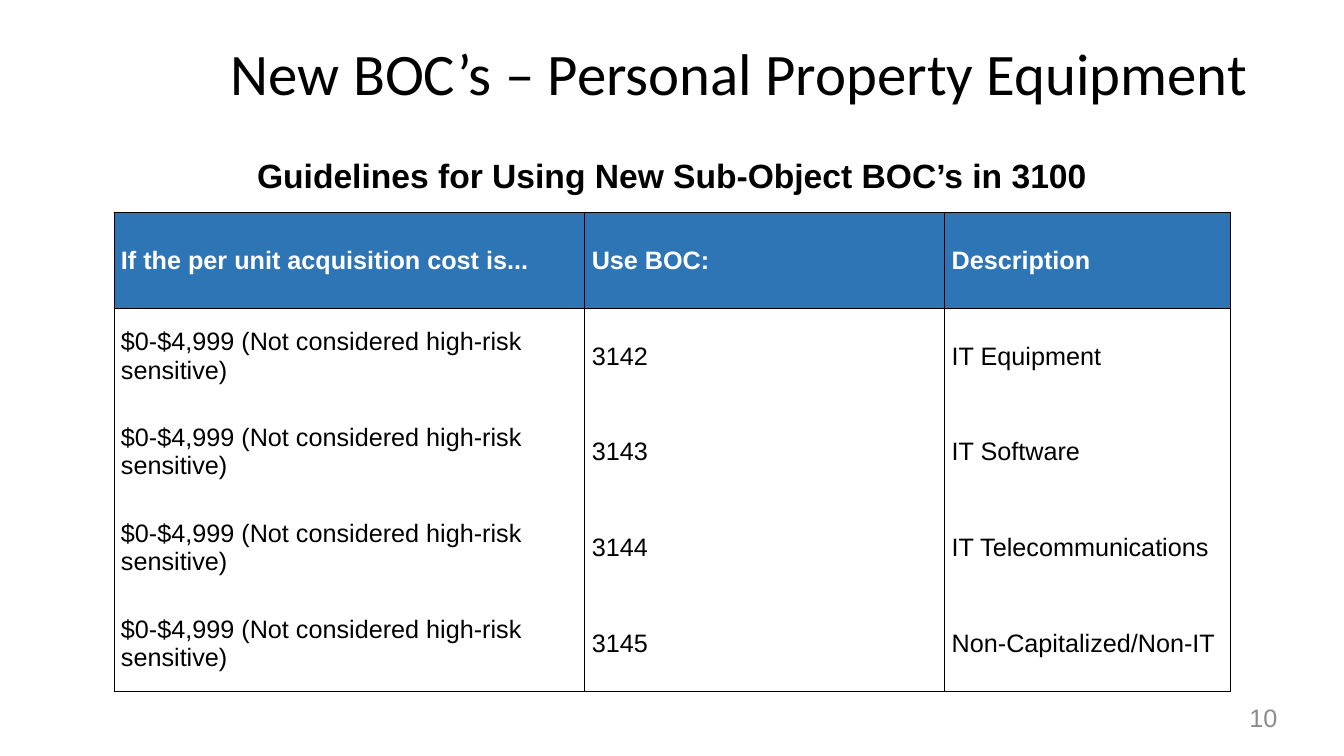
from lxml.etree import SubElement
from pptx import Presentation
from pptx.dml.color import RGBColor
from pptx.enum.text import MSO_ANCHOR, PP_ALIGN
from pptx.oxml.ns import qn
from pptx.util import Inches, Pt

COLORS = {"black": "000000", "white": "FFFFFF", "header": "2E75B6", "number": "8C8C8C"}
COST = "$0-$4,999 (Not considered high-risk sensitive)"
HEADER = ("If the per unit acquisition cost is...", "Use BOC:", "Description")
CODES = {
    "3142": "IT Equipment",
    "3143": "IT Software",
    "3144": "IT Telecommunications",
    "3145": "Non-Capitalized/Non-IT",
}


def write_text(frame, text, size=18, font="Arial", color="black", bold=False, align=PP_ALIGN.LEFT):
    paragraph = frame.paragraphs[0]
    paragraph.alignment = align
    run = paragraph.add_run()
    run.text = text
    run.font.size = Pt(size)
    run.font.name = font
    run.font.bold = bold
    run.font.color.rgb = RGBColor.from_string(COLORS[color])


class SlideBuilder:
    """Adds styled text and ruled tables to one slide."""

    def __init__(self, slide, border_width=0.6):
        self.slide = slide
        self.border_width = border_width

    def text(self, left, top, width, height, text, **style):
        box = self.slide.shapes.add_textbox(*map(Inches, (left, top, width, height)))
        frame = box.text_frame
        frame.word_wrap = True
        frame.margin_left = frame.margin_right = frame.margin_top = frame.margin_bottom = 0
        write_text(frame, text, **style)

    def borders(self, cell, visible):
        properties = cell._tc.get_or_add_tcPr()
        for side in "LRTB":
            line = SubElement(properties, qn(f"a:ln{side}"), w=str(Pt(self.border_width)))
            if side in visible:
                fill = SubElement(line, qn("a:solidFill"))
                SubElement(fill, qn("a:srgbClr"), val=COLORS["black"])
            else:
                SubElement(line, qn("a:noFill"))

    def table(self, left, top, widths, row_height, rows):
        size = (sum(widths), row_height * len(rows))
        table = self.slide.shapes.add_table(
            len(rows), len(widths), *map(Inches, (left, top, *size))
        ).table
        table.horz_banding = False
        for column, width in zip(table.columns, widths):
            column.width = Inches(width)
        for index, values in enumerate(rows):
            table.rows[index].height = Inches(row_height)
            is_header = index == 0
            visible = "LR" + "T" * (index <= 1) + "B" * (index in (0, len(rows) - 1))
            for cell, value in zip(table.rows[index].cells, values):
                cell.vertical_anchor = MSO_ANCHOR.MIDDLE
                cell.margin_left = cell.margin_right = Inches(0.07)
                cell.margin_top = cell.margin_bottom = Inches(0.04)
                self.borders(cell, visible)
                if is_header:
                    cell.fill.solid()
                    cell.fill.fore_color.rgb = RGBColor.from_string(COLORS["header"])
                else:
                    cell.fill.background()
                write_text(cell.text_frame, value, bold=is_header,
                           color="white" if is_header else "black")


def main():
    presentation = Presentation()
    presentation.slide_width = Inches(13.33)
    presentation.slide_height = Inches(7.5)
    builder = SlideBuilder(presentation.slides.add_slide(presentation.slide_layouts[6]))
    builder.text(2.29, 0.36, 10.66, 0.71, "New BOC’s – Personal Property Equipment",
                 size=42, font="Calibri")
    builder.text(0.78, 1.54, 11.77, 0.57, "Guidelines for Using New Sub-Object BOC’s in 3100",
                 size=24, bold=True, align=PP_ALIGN.CENTER)
    rows = [HEADER] + [(COST, code, description) for code, description in CODES.items()]
    builder.table(1.13, 2.11, (4.67, 3.57, 2.83), 0.95, rows)
    builder.text(9.6, 6.97, 3.07, 0.3, "10", color="number", align=PP_ALIGN.RIGHT)
    presentation.save("out.pptx")


if __name__ == "__main__":
    main()
